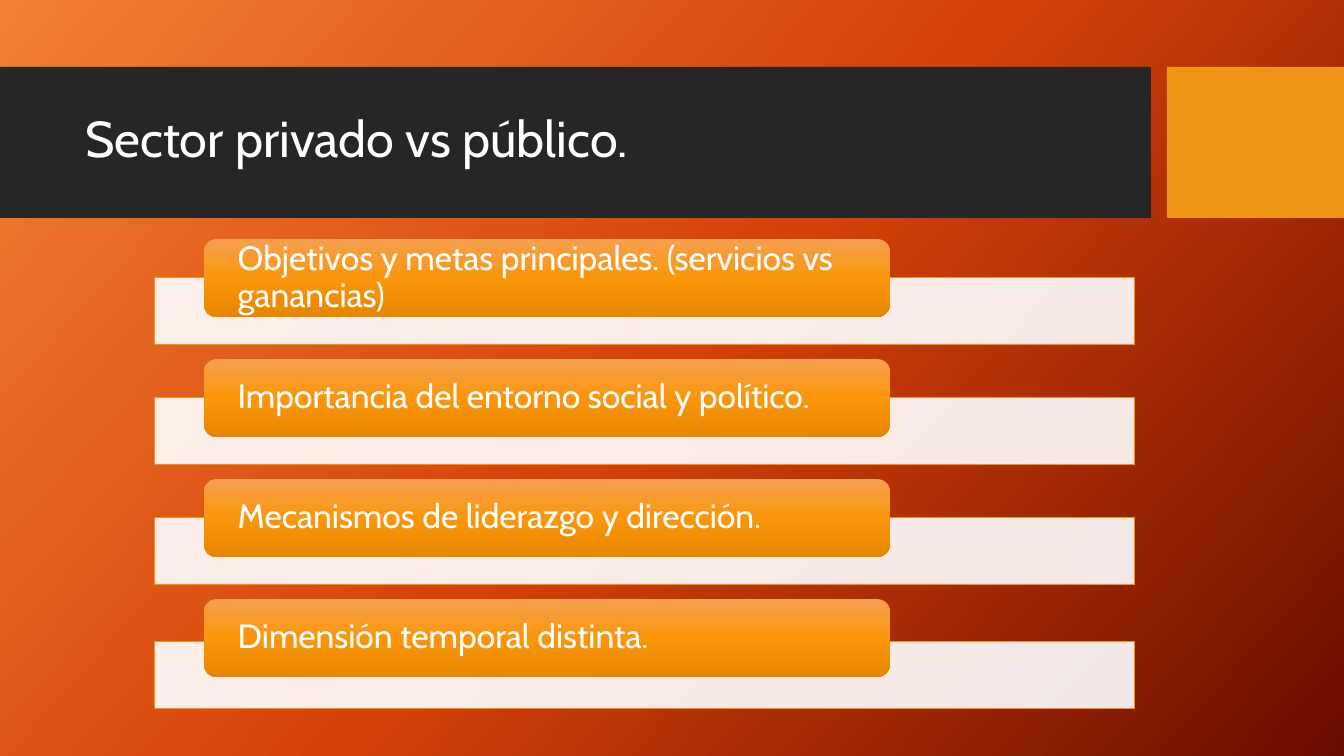
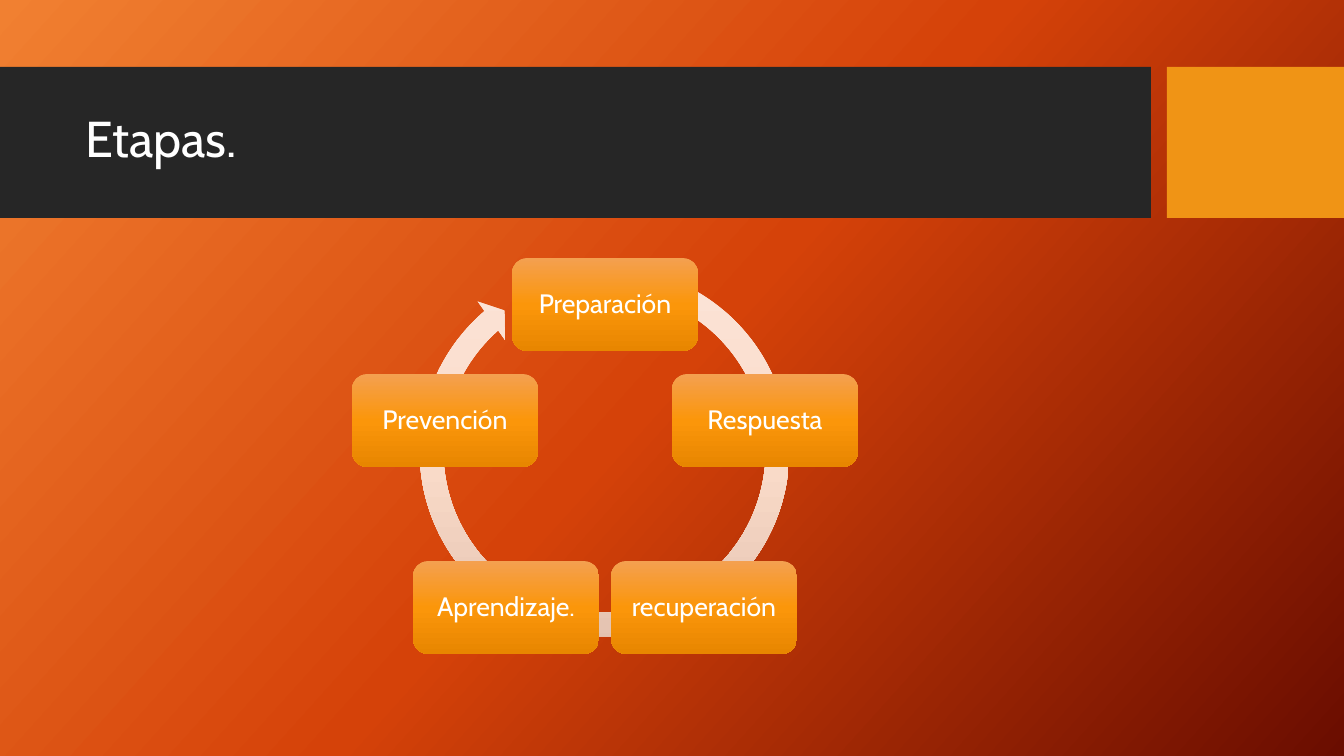
import copy
import math

import pptx
import pptx.dml.color
import pptx.enum.shapes
import pptx.enum.text
import pptx.oxml
import pptx.oxml.ns
import pptx.util

KIND = pptx.enum.shapes.MSO_SHAPE
ALIGN = pptx.enum.text.PP_ALIGN
MIDDLE = pptx.enum.text.MSO_ANCHOR.MIDDLE
SCALE = 914400 / 100.8

# Shared colours; each gradient has stops at 0, 50 and 100 %
WHITE, DARK, GOLD = "FFFFFF", "262626", "F09415"
BACK = ("F18031", "D54209", "6A0D00")
CARD = ("F4A050", "FB960A", "E88600")
RING = ("FBE4D8", "FBDCCA", "E3C2B0")


def px(count):
    return pptx.util.Emu(round(count * SCALE))


def tint(code):
    return pptx.dml.color.RGBColor.from_string(code)


def apply(target, values):
    for name, value in values.items():
        setattr(target, name, value)


class Deck:
    font = "Cabin"

    def __init__(self):
        self.prs = pptx.Presentation()
        apply(self.prs, {"slide_width": px(1344), "slide_height": px(756)})
        self.slide = None

    def blend(self, owner, fill, codes, angle):
        """Fill with three evenly spaced colour stops."""
        fill.gradient()
        fill.gradient_angle = 360 - angle
        last = list(owner.element.iter(pptx.oxml.ns.qn("a:gs")))[-1]
        last.addnext(copy.deepcopy(last))
        for stop, code, place in zip(fill.gradient_stops, codes, (0, 0.5, 1)):
            stop.color.rgb = tint(code)
            stop.position = place

    def shape(self, kind, box, fill, edge=None, alpha=None):
        item = self.slide.shapes.add_shape(kind, *map(px, box))
        item.shadow.inherit = False
        if isinstance(fill, tuple):
            self.blend(item, item.fill, fill, 90)
        else:
            item.fill.solid()
            item.fill.fore_color.rgb = tint(fill)
        if alpha:
            node = item.element.spPr.find(".//" + pptx.oxml.ns.qn("a:srgbClr"))
            child = pptx.oxml.parse_xml(
                f'<a:alpha {pptx.oxml.ns.nsdecls("a")} val="{alpha * 1000}"/>')
            node.append(child)
        if edge:
            item.line.color.rgb = tint(edge)
            item.line.width = pptx.util.Pt(0.75)
        else:
            item.line.fill.background()
        return item

    def label(self, item, text, size, align=ALIGN.LEFT, side=10, top=5):
        frame = item.text_frame
        apply(frame, {
            "word_wrap": True, "vertical_anchor": MIDDLE,
            "margin_left": px(side), "margin_right": px(side),
            "margin_top": px(top), "margin_bottom": px(top)})
        para = frame.paragraphs[0]
        apply(para, {"alignment": align, "line_spacing": 0.9})
        run = para.add_run()
        run.text = text
        apply(run.font, {"name": self.font, "size": pptx.util.Pt(size)})
        run.font.color.rgb = tint(WHITE)

    def card(self, box, text, size, **style):
        self.label(self.shape(KIND.ROUNDED_RECTANGLE, box, CARD),
                   text, size, **style)

    def page(self, title):
        """Start a slide with background, title band and gold block."""
        self.slide = self.prs.slides.add_slide(self.prs.slide_layouts[6])
        self.blend(self.slide, self.slide.background.fill, BACK, 42)
        self.shape(KIND.RECTANGLE, (0, 67, 1151, 151), DARK)
        self.shape(KIND.RECTANGLE, (1167, 67, 177, 151), GOLD)
        box = map(px, (75, 82, 1059, 119))
        self.label(self.slide.shapes.add_textbox(*box), title, 36)


def main():
    deck = Deck()

    # Sectors: a label card over each pale bar; the last bar hangs lower
    deck.page("Sector privado vs público.")
    rows = (
        ("Objetivos y metas principales. (servicios vs ganancias)", 39),
        ("Importancia del entorno social y político.", 39),
        ("Mecanismos de liderazgo y dirección.", 39),
        ("Dimensión temporal distinta.", 43),
    )
    for index, (text, drop) in enumerate(rows):
        top = 239 + 120 * index
        deck.shape(KIND.RECTANGLE, (155, top + drop, 980, 67),
                   WHITE, edge=GOLD, alpha=90)
        deck.card((204, top, 686, 78), text, 24, side=30, top=0)

    # Stages: cards evenly spaced clockwise around a circular arrow
    deck.page("Etapas.")
    ring = deck.shape(KIND.CIRCULAR_ARROW, (408, 255, 393, 393), RING)
    for index, value in enumerate((0.06, 3.31, 137.48, 174.03, 0.06)):
        ring.adjustments[index] = value
    steps = ("Preparación", "Respuesta", "recuperación",
             "Aprendizaje.", "Prevención")
    wide, high, radius = 186, 93, 168
    for index, text in enumerate(steps):
        turn = math.tau * index / len(steps)
        left = round(605 + radius * math.sin(turn) - wide / 2)
        top = round(472 - radius * math.cos(turn) - high / 2)
        deck.card((left, top, wide, high), text, 19,
                  align=ALIGN.CENTER, side=12, top=12)

    deck.prs.save("out.pptx")


if __name__ == "__main__":
    main()
